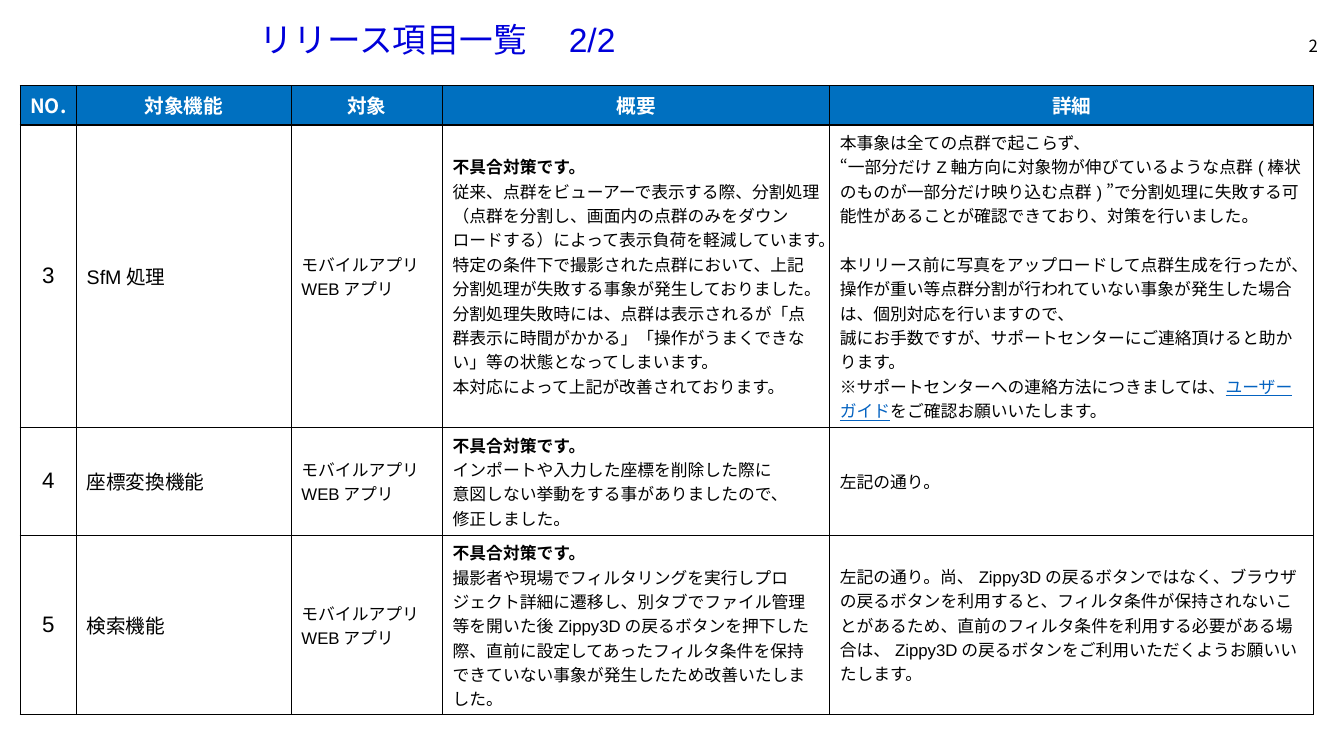
from lxml import etree
from pptx import Presentation
from pptx import util as u
from pptx.dml.color import RGBColor
from pptx.enum import lang, text
from pptx.oxml import ns

BLACK, WHITE, BLUE, TITLE_BLUE, LINK = "000000", "FFFFFF", "0070C0", "0000DA", "0563C1"
LATIN, JAPANESE = "Arial", "Noto Sans CJK JP"
CENTER, RIGHT = text.PP_ALIGN.CENTER, text.PP_ALIGN.RIGHT

COLUMNS = [0.56, 2.13, 1.5, 3.84, 4.8]
ROWS = [0.39, 3.0, 1.07, 1.78]
HEADINGS = ["NO.", "対象機能", "対象", "概要", "詳細"]
TARGETS = ["モバイルアプリ", "WEBアプリ"]
SUMMARY_LEAD = "不具合対策です。"
GUIDE = "ユーザーガイド"
SECOND_TOPIC = "本リリース前に"
ITEMS = [
    ("3", "SfM処理", [
        "従来、点群をビューアーで表示する際、分割処理（点群を分割し、画面内の点群のみをダウンロードする）によって表示負荷を軽減しています。",
        "特定の条件下で撮影された点群において、上記分割処理が失敗する事象が発生しておりました。",
        "分割処理失敗時には、点群は表示されるが「点群表示に時間がかかる」「操作がうまくできない」等の状態となってしまいます。",
        "本対応によって上記が改善されております。",
    ], [
        "本事象は全ての点群で起こらず、",
        "“一部分だけZ軸方向に対象物が伸びているような点群(棒状のものが一部分だけ映り込む点群)”で分割処理に失敗する可能性があることが確認できており、対策を行いました。",
        SECOND_TOPIC + "写真をアップロードして点群生成を行ったが、操作が重い等点群分割が行われていない事象が発生した場合は、個別対応を行いますので、",
        "誠にお手数ですが、サポートセンターにご連絡頂けると助かります。",
        "※サポートセンターへの連絡方法につきましては、" + GUIDE + "をご確認お願いいたします。",
    ]),
    ("4", "座標変換機能", [
        "インポートや入力した座標を削除した際に",
        "意図しない挙動をする事がありましたので、",
        "修正しました。",
    ], ["左記の通り。"]),
    ("5", "検索機能", [
        "撮影者や現場でフィルタリングを実行しプロジェクト詳細に遷移し、別タブでファイル管理等を開いた後Zippy3Dの戻るボタンを押下した際、直前に設定してあったフィルタ条件を保持できていない事象が発生したため改善いたしました。",
    ], [
        "左記の通り。尚、Zippy3Dの戻るボタンではなく、ブラウザの戻るボタンを利用すると、フィルタ条件が保持されないことがあるため、直前のフィルタ条件を利用する必要がある場合は、Zippy3Dの戻るボタンをご利用いただくようお願いいたします。",
    ]),
]


def rgb(color):
    return RGBColor.from_string(color)


class ReleaseSlide:
    def __init__(self, deck):
        self.slide = deck.slides.add_slide(deck.slide_layouts[6])

    def style(self, run, size, color=BLACK, bold=False, latin=LATIN):
        font = run.font
        font.size, font.bold = u.Pt(size), bold
        font.color.rgb = rgb(color)
        font.name = latin
        font.language_id = lang.MSO_LANGUAGE_ID.JAPANESE
        east_asian = etree.Element(ns.qn("a:ea"), typeface=JAPANESE)
        run._r.rPr.find(ns.qn("a:latin")).addnext(east_asian)

    def set_lines(self, frame, lines, size, align=None, **look):
        frame.text = "\n".join(lines)
        for paragraph in frame.paragraphs:
            paragraph.alignment = align
            for run in paragraph.runs:
                self.style(run, size, **look)

    def label(self, box, line, size, align=None, **look):
        frame = self.slide.shapes.add_textbox(*map(u.Inches, box)).text_frame
        frame.word_wrap = True
        frame.margin_top = frame.margin_bottom = 0
        frame.vertical_anchor = text.MSO_ANCHOR.MIDDLE
        self.set_lines(frame, [line], size, align, **look)
        return frame

    def table(self, left, top, columns, rows):
        size = (left, top, sum(columns), sum(rows))
        table = self.slide.shapes.add_table(
            len(rows), len(columns), *map(u.Inches, size)).table
        for column, width in zip(table.columns, columns):
            column.width = u.Inches(width)
        for row, height in zip(table.rows, rows):
            row.height = u.Inches(height)
        return table

    def cell(self, cell, lines, size, align=None, fill=WHITE, **look):
        self.set_lines(cell.text_frame, lines, size, align, **look)
        cell.vertical_anchor = text.MSO_ANCHOR.MIDDLE
        properties = cell._tc.get_or_add_tcPr()
        for side in ("L", "R", "T", "B"):
            border = etree.SubElement(properties, ns.qn("a:ln" + side), w=str(u.Pt(1)))
            paint = etree.SubElement(border, ns.qn("a:solidFill"))
            etree.SubElement(paint, ns.qn("a:srgbClr"), val=BLACK)
        cell.fill.solid()
        cell.fill.fore_color.rgb = rgb(fill)
        return cell.text_frame.paragraphs

    def mark_link(self, paragraph, phrase):
        """Split the paragraph around the phrase and make the phrase look like a link."""
        before, after = paragraph.text.split(phrase)
        paragraph.text = before
        paragraph.add_run().text = phrase
        paragraph.add_run().text = after
        for run in paragraph.runs:
            is_link = run.text == phrase
            self.style(run, 12, LINK if is_link else BLACK)
            run.font.underline = is_link


def main():
    deck = Presentation()
    deck.slide_width, deck.slide_height = u.Inches(13.33), u.Inches(7.5)
    page = ReleaseSlide(deck)

    page.label((12.48, 0.3, 0.69, 0.3), "2", 12, RIGHT, latin=JAPANESE)
    title = page.label((2.48, 0.2, 8.92, 0.42), "リリース項目一覧　2/2", 24, color=TITLE_BLUE)
    title.paragraphs[0].line_spacing = 0.9

    table = page.table(0.2, 0.85, COLUMNS, ROWS)
    for column, heading in enumerate(HEADINGS):
        page.cell(table.cell(0, column), [heading], 14, CENTER, BLUE,
                  color=WHITE, bold=True, latin=JAPANESE)

    for row, (number, feature, summary, details) in enumerate(ITEMS, 1):
        cells = table.rows[row].cells
        page.cell(cells[0], [number], 16, CENTER)
        page.cell(cells[1], [feature], 14)
        page.cell(cells[2], TARGETS, 12)
        lead = page.cell(cells[3], [SUMMARY_LEAD] + summary, 12)[0]
        lead.runs[0].font.bold = True
        for paragraph in page.cell(cells[4], details, 12):
            if paragraph.text.startswith(SECOND_TOPIC):
                paragraph.space_before = u.Pt(17.4)
            if GUIDE in paragraph.text:
                page.mark_link(paragraph, GUIDE)

    deck.save("out.pptx")


if __name__ == "__main__":
    main()
